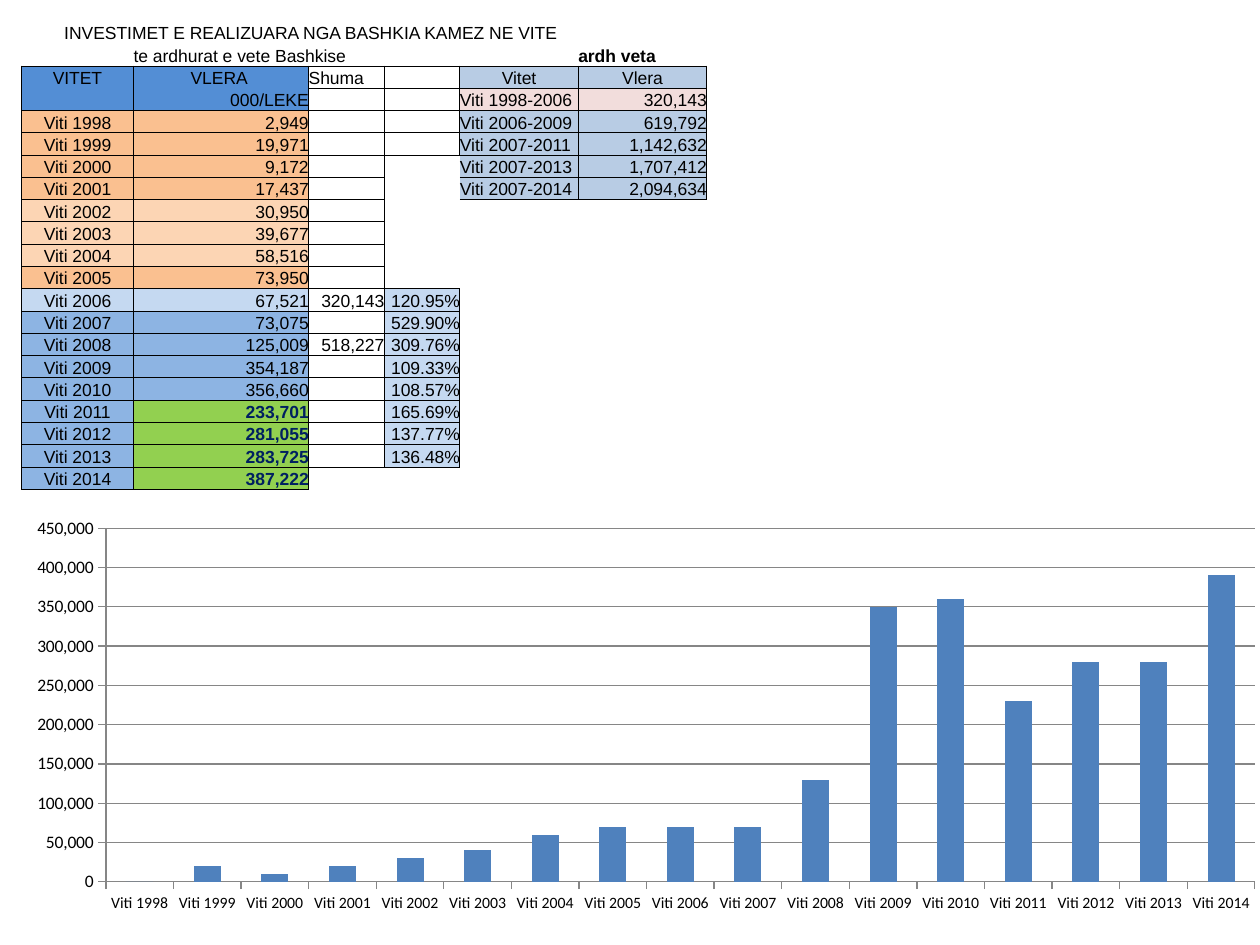
"""Build the slide of yearly municipal investments: a table above a column chart."""
from lxml import etree
from pptx import Presentation
from pptx.chart.data import CategoryChartData
from pptx.dml.color import RGBColor
from pptx.enum.chart import XL_CHART_TYPE as ChartType, XL_TICK_MARK as TickMark
from pptx.enum.text import MSO_ANCHOR as Anchor, PP_ALIGN as Align
from pptx.oxml import parse_xml
from pptx.oxml.ns import nsdecls, qn
from pptx.util import Inches, Pt


def color(value):
    return RGBColor.from_string(value)


def write_cell(cell, text, align=Align.LEFT, fill=None, bold=False, ink="000000", indent=0):
    paragraph = cell.text_frame.paragraphs[0]
    paragraph.alignment = align
    cell.margin_left = Inches(indent)
    run = paragraph.add_run()
    run.text = text
    run.font.name = "Arial"
    run.font.size = Pt(10)
    run.font.bold = bold
    run.font.color.rgb = color(ink)
    if fill:
        cell.fill.solid()
        cell.fill.fore_color.rgb = color(fill)


presentation = Presentation()
presentation.slide_width = Inches(10)
presentation.slide_height = Inches(7.5)
slide = presentation.slides.add_slide(presentation.slide_layouts[6])

investments = {
    1998: 2949, 1999: 19971, 2000: 9172, 2001: 17437, 2002: 30950, 2003: 39677,
    2004: 58516, 2005: 73950, 2006: 67521, 2007: 73075, 2008: 125009, 2009: 354187,
    2010: 356660, 2011: 233701, 2012: 281055, 2013: 283725, 2014: 387222,
}
sums = {2006: "320,143", 2008: "518,227"}
growth = ["120.95%", "529.90%", "309.76%", "109.33%", "108.57%", "165.69%", "137.77%", "136.48%"]
periods = [
    ("1998-2006", 320143), ("2006-2009", 619792), ("2007-2011", 1142632),
    ("2007-2013", 1707412), ("2007-2014", 2094634),
]
column_widths = [0.89, 1.39, 0.6, 0.6, 0.94, 1.02]
row_count = 21
first_year_row = 4
growth_row = 12

frame = slide.shapes.add_table(
    row_count, len(column_widths), Inches(0.17), Inches(0.17), Inches(5.44), Inches(3.72)
)
table = frame.table
table.first_row = table.horz_banding = False
table._tbl.tblPr.find(qn("a:tableStyleId")).text = "{2D5ABB26-0587-4C30-8999-92F81FD0307C}"
for column, width in zip(table.columns, column_widths):
    column.width = Inches(width)
for row in table.rows:
    row.height = Inches(3.72 / row_count)

boxed_rows = [
    range(2, 21), range(2, 21), range(2, 20),
    [*range(2, 6), *range(12, 20)], range(2, 8), range(2, 8),
]
open_sides = {
    (2, 0): "B", (2, 1): "B", (3, 0): "T", (3, 1): "T", (6, 4): "L", (7, 4): "L",
}
for row_index in range(row_count):
    for column_index, boxed in enumerate(boxed_rows):
        cell = table.cell(row_index, column_index)
        cell.margin_left = cell.margin_right = cell.margin_top = cell.margin_bottom = 0
        cell.vertical_anchor = Anchor.BOTTOM
        etree.SubElement(cell.text_frame.paragraphs[0]._p, qn("a:endParaRPr"), sz="1000")
        if row_index not in boxed:
            continue
        for side in "LRTB":
            line = etree.SubElement(cell._tc.tcPr, qn(f"a:ln{side}"), w=str(Pt(0.5)))
            if side in open_sides.get((row_index, column_index), ""):
                etree.SubElement(line, qn("a:noFill"))
            else:
                solid = etree.SubElement(line, qn("a:solidFill"))
                etree.SubElement(solid, qn("a:srgbClr"), val="000000")

table.cell(0, 0).merge(table.cell(0, 4))
table.cell(1, 1).merge(table.cell(1, 2))
write_cell(table.cell(0, 0), "INVESTIMET E REALIZUARA NGA BASHKIA KAMEZ NE VITE", indent=0.34)
write_cell(table.cell(1, 1), "te ardhurat e vete Bashkise")
write_cell(table.cell(1, 5), "ardh veta", bold=True)
write_cell(table.cell(2, 0), "VITET", align=Align.CENTER, fill="538ED5")
write_cell(table.cell(2, 1), "VLERA ", align=Align.CENTER, fill="538ED5")
write_cell(table.cell(2, 2), "Shuma")
write_cell(table.cell(2, 4), "Vitet", align=Align.CENTER, fill="B8CCE4")
write_cell(table.cell(2, 5), "Vlera", align=Align.CENTER, fill="B8CCE4")
table.cell(3, 0).fill.solid()
table.cell(3, 0).fill.fore_color.rgb = color("538ED5")
write_cell(table.cell(3, 1), "000/LEKE", align=Align.RIGHT, fill="538ED5")

for row_index, (year, amount) in enumerate(investments.items(), first_year_row):
    if year >= 2007:
        fill = "8DB4E3"
    elif year == 2006:
        fill = "C5D9F1"
    else:
        fill = "FCD5B4" if 2002 <= year <= 2004 else "FAC090"
    recent = year >= 2011
    write_cell(table.cell(row_index, 0), f"Viti {year}", align=Align.CENTER, fill=fill)
    write_cell(
        table.cell(row_index, 1), f"{amount:,}", align=Align.RIGHT, bold=recent,
        fill="92D050" if recent else fill, ink="002060" if recent else "000000",
    )
    if year in sums:
        write_cell(table.cell(row_index, 2), sums[year], align=Align.RIGHT)

for row_index, rate in enumerate(growth, growth_row):
    write_cell(table.cell(row_index, 3), rate, align=Align.RIGHT, fill="C5D9F1")

for row_index, (period, total) in enumerate(periods, 3):
    fill = "F2DDDC" if row_index == 3 else "B8CCE4"
    write_cell(table.cell(row_index, 4), f"Viti {period}", fill=fill)
    write_cell(table.cell(row_index, 5), f"{total:,}", align=Align.RIGHT, fill=fill)

chart_data = CategoryChartData(number_format="#,##0")
chart_data.categories = [f"Viti {year}" for year in investments]
chart_data.add_series("Series 1", [round(amount, -4) for amount in investments.values()])
chart = slide.shapes.add_chart(
    ChartType.COLUMN_STACKED, Inches(0), Inches(4), Inches(10), Inches(3.5), chart_data
).chart
chart.has_legend = False
chart.has_title = False
chart.font.name = "Calibri"
chart.font.size = Pt(10)
chart.font.color.rgb = color("000000")

plot = chart.plots[0]
plot.gap_width = 150
plot.overlap = 100
plot.vary_by_categories = False
series_fill = plot.series[0].format.fill
series_fill.solid()
series_fill.fore_color.rgb = color("4F81BD")

value_axis = chart.value_axis
value_axis.minimum_scale = 0
value_axis.maximum_scale = 450000
value_axis.major_unit = 50000
value_axis.has_major_gridlines = True
value_axis.tick_labels.number_format = "#,##0"
value_axis.tick_labels.number_format_is_linked = False
for axis, size in ((chart.category_axis, 9), (value_axis, 10)):
    axis.major_tick_mark = TickMark.OUTSIDE
    axis.tick_labels.font.name = "Calibri"
    axis.tick_labels.font.size = Pt(size)
    axis.tick_labels.font.color.rgb = color("000000")
for line in (chart.category_axis.format.line, value_axis.format.line, value_axis.major_gridlines.format.line):
    line.color.rgb = color("868686")
    line.width = Pt(0.75)

plot_area = chart._chartSpace.chart.plotArea
for layout in plot_area.findall(qn("c:layout")):
    plot_area.remove(layout)
plot_area.insert(0, parse_xml(
    f'<c:layout {nsdecls("c")}><c:manualLayout><c:layoutTarget val="inner"/>'
    '<c:xMode val="edge"/><c:yMode val="edge"/><c:x val="0.084"/><c:y val="0.055"/>'
    '<c:w val="0.912"/><c:h val="0.802"/></c:manualLayout></c:layout>'
))

presentation.save("out.pptx")
